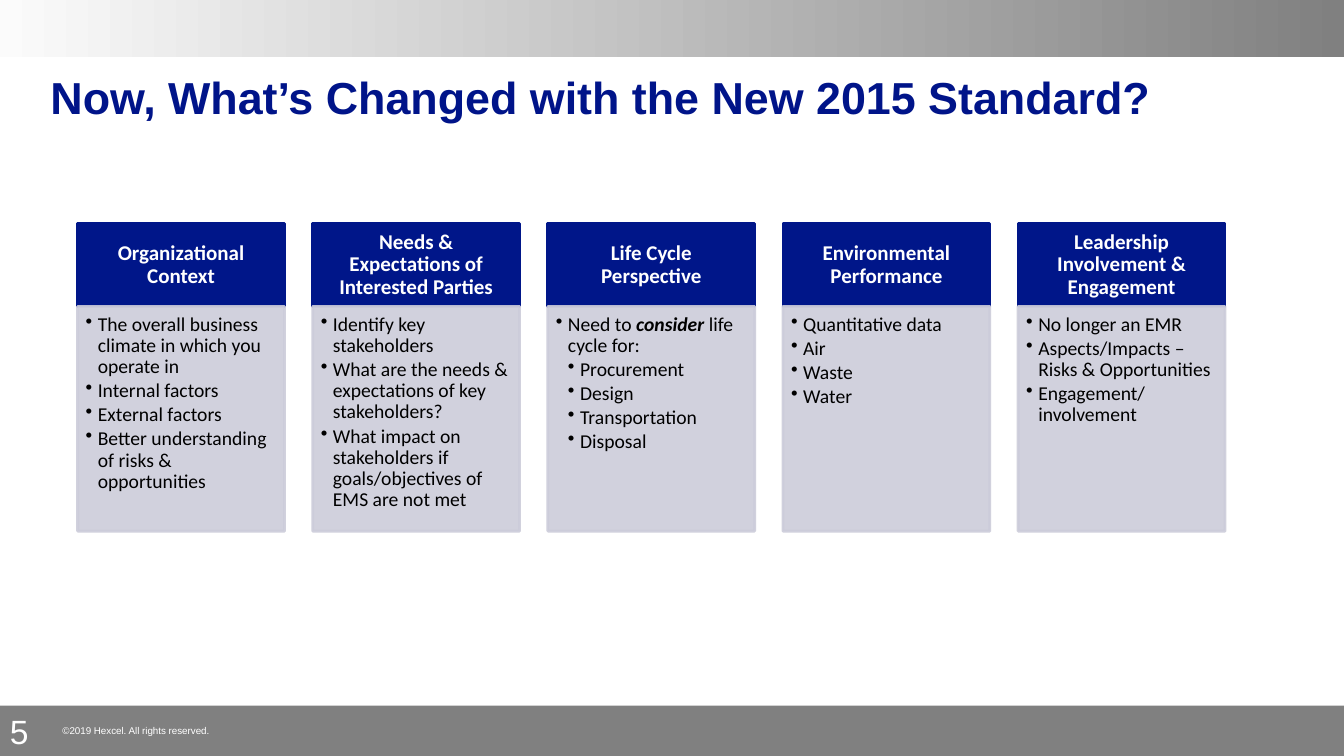
from dataclasses import dataclass

from lxml.etree import SubElement
from pptx import Presentation
from pptx.dml.color import RGBColor
from pptx.enum.shapes import MSO_SHAPE
from pptx.enum.text import MSO_ANCHOR, PP_ALIGN
from pptx.oxml.ns import qn
from pptx.util import Inches, Pt


@dataclass(frozen=True)
class Theme:
    title_blue: str = "001489"
    header_blue: str = "001689"
    panel: str = "CCCCDA"
    panel_opacity: int = 90
    band_light: str = "FBFBFB"
    band_dark: str = "808080"
    white: str = "FFFFFF"
    black: str = "000000"
    heading_font: str = "Arial"
    card_font: str = "Calibri"
    title_size: int = 32
    number_size: int = 24
    header_size: int = 15
    bullet_size: int = 14
    copyright_size: int = 7


@dataclass(frozen=True)
class Box:
    left: float
    top: float
    width: float
    height: float

    def inches(self):
        return [Inches(v) for v in (self.left, self.top, self.width, self.height)]


THEME = Theme()
WIDTH, HEIGHT = 13.33, 7.5
HEADER_HEIGHT = 0.82
COLUMN_GAP = 0.28
BULLET_INDENT = 0.12

# Heading and bullets of each column: (level, text), with *stressed* words
CHANGES = [
    ("Organizational Context", [
        (0, "The overall business climate in which you operate in"),
        (0, "Internal factors"),
        (0, "External factors"),
        (0, "Better understanding of risks & opportunities")]),
    ("Needs & Expectations of Interested Parties", [
        (0, "Identify key stakeholders"),
        (0, "What are the needs & expectations of key stakeholders?"),
        (0, "What impact on stakeholders if goals/objectives of EMS are not met")]),
    ("Life Cycle Perspective", [
        (0, "Need to *consider* life cycle for:"),
        (1, "Procurement"),
        (1, "Design"),
        (1, "Transportation"),
        (1, "Disposal")]),
    ("Environmental Performance", [
        (0, "Quantitative data"),
        (0, "Air"),
        (0, "Waste"),
        (0, "Water")]),
    ("Leadership Involvement & Engagement", [
        (0, "No longer an EMR"),
        (0, "Aspects/Impacts – Risks & Opportunities"),
        (0, "Engagement/involvement")]),
]


def rgb(color):
    return RGBColor.from_string(color)


def style(para, name, size, color, bold=False):
    font = para.font
    font.name, font.size, font.bold = name, Pt(size), bold
    font.color.rgb = rgb(color)


def set_frame(frame, margins, anchor):
    frame.word_wrap = True
    frame.vertical_anchor = anchor
    (frame.margin_left, frame.margin_top,
     frame.margin_right, frame.margin_bottom) = [Inches(m) for m in margins]


def add_rectangle(page, box, color=None, line_width=0):
    shape = page.shapes.add_shape(MSO_SHAPE.RECTANGLE, *box.inches())
    shape.shadow.inherit = False
    if color:
        shape.fill.solid()
        shape.fill.fore_color.rgb = rgb(color)
    if line_width:
        shape.line.width = Pt(line_width)
        shape.line.color.rgb = rgb(color)
    else:
        shape.line.fill.background()
    return shape


def set_opacity(shape, percent):
    for color in shape._element.spPr.iter(qn("a:srgbClr")):
        SubElement(color, qn("a:alpha")).set("val", str(percent * 1000))


def add_label(page, box, text, size):
    frame = page.shapes.add_textbox(*box.inches()).text_frame
    set_frame(frame, (0.1, 0.05, 0.1, 0.05), MSO_ANCHOR.TOP)
    frame.text = text
    style(frame.paragraphs[0], THEME.heading_font, size, THEME.white)


def add_top_band(page, box):
    fill = add_rectangle(page, box).fill
    fill.gradient()
    fill.gradient_angle = 0
    for stop, color in zip(fill.gradient_stops, (THEME.band_light, THEME.band_dark)):
        stop.color.rgb = rgb(color)


def add_footer(page, box):
    add_rectangle(page, box, THEME.band_dark)
    add_label(page, Box(box.left, box.top, 0.72, box.height), "5", THEME.number_size)
    add_label(page, Box(box.left + 0.52, box.top + 0.14, 6.58, 0.22),
              "©2019 Hexcel. All rights reserved.", THEME.copyright_size)


def set_title(page, box, text):
    title = page.shapes.title
    title.left, title.top, title.width, title.height = box.inches()
    frame = title.text_frame
    set_frame(frame, (0, 0, 0, 0), MSO_ANCHOR.BOTTOM)
    frame.text = text
    para = frame.paragraphs[0]
    para.alignment = PP_ALIGN.LEFT
    style(para, THEME.heading_font, THEME.title_size, THEME.title_blue, True)


def add_bullet(para, level, text):
    para.level = level
    para.alignment = PP_ALIGN.LEFT
    para.line_spacing = 0.9
    para.space_after = Pt(2)
    properties = para._p.get_or_add_pPr()
    properties.set("marL", str(Inches(BULLET_INDENT * (level + 1))))
    properties.set("indent", str(-Inches(BULLET_INDENT)))
    SubElement(properties, qn("a:buChar")).set("char", "•")
    style(para, THEME.card_font, THEME.bullet_size, THEME.black)
    for index, part in enumerate(text.split("*")):
        span = para.add_run()
        span.text = part
        if index % 2:
            span.font.bold = span.font.italic = True


def add_card(page, box, heading, bullets):
    # Header
    header = add_rectangle(page, Box(box.left, box.top, box.width, HEADER_HEIGHT),
                           THEME.header_blue, 2)
    set_frame(header.text_frame, (0.12, 0.07, 0.12, 0.07), MSO_ANCHOR.MIDDLE)
    header.text_frame.text = heading
    para = header.text_frame.paragraphs[0]
    para.alignment = PP_ALIGN.CENTER
    para.line_spacing = 0.9
    style(para, THEME.card_font, THEME.header_size, THEME.white, True)

    # Bulleted panel
    panel = add_rectangle(page, Box(box.left, box.top + HEADER_HEIGHT, box.width,
                                    box.height - HEADER_HEIGHT), THEME.panel, 2)
    set_opacity(panel, THEME.panel_opacity)
    frame = panel.text_frame
    set_frame(frame, (0.08, 0.08, 0.11, 0.12), MSO_ANCHOR.TOP)
    for index, (level, text) in enumerate(bullets):
        para = frame.add_paragraph() if index else frame.paragraphs[0]
        add_bullet(para, level, text)


def add_columns(page, box, changes):
    width = (box.width - COLUMN_GAP * (len(changes) - 1)) / len(changes)
    for index, (heading, bullets) in enumerate(changes):
        left = box.left + index * (width + COLUMN_GAP)
        add_card(page, Box(left, box.top, width, box.height), heading, bullets)


def main():
    deck = Presentation()
    deck.slide_width, deck.slide_height = Inches(WIDTH), Inches(HEIGHT)
    page = deck.slides.add_slide(deck.slide_layouts.get_by_name("Title Only"))
    add_top_band(page, Box(0, 0, WIDTH, 0.57))
    add_footer(page, Box(0, HEIGHT - 0.5, WIDTH, 0.5))
    set_title(page, Box(0.5, 0.66, 12.5, 0.57),
              "Now, What’s Changed with the New 2015 Standard?")
    add_columns(page, Box(0.77, 2.22, 11.38, 3.05), CHANGES)
    deck.save("out.pptx")


if __name__ == "__main__":
    main()
